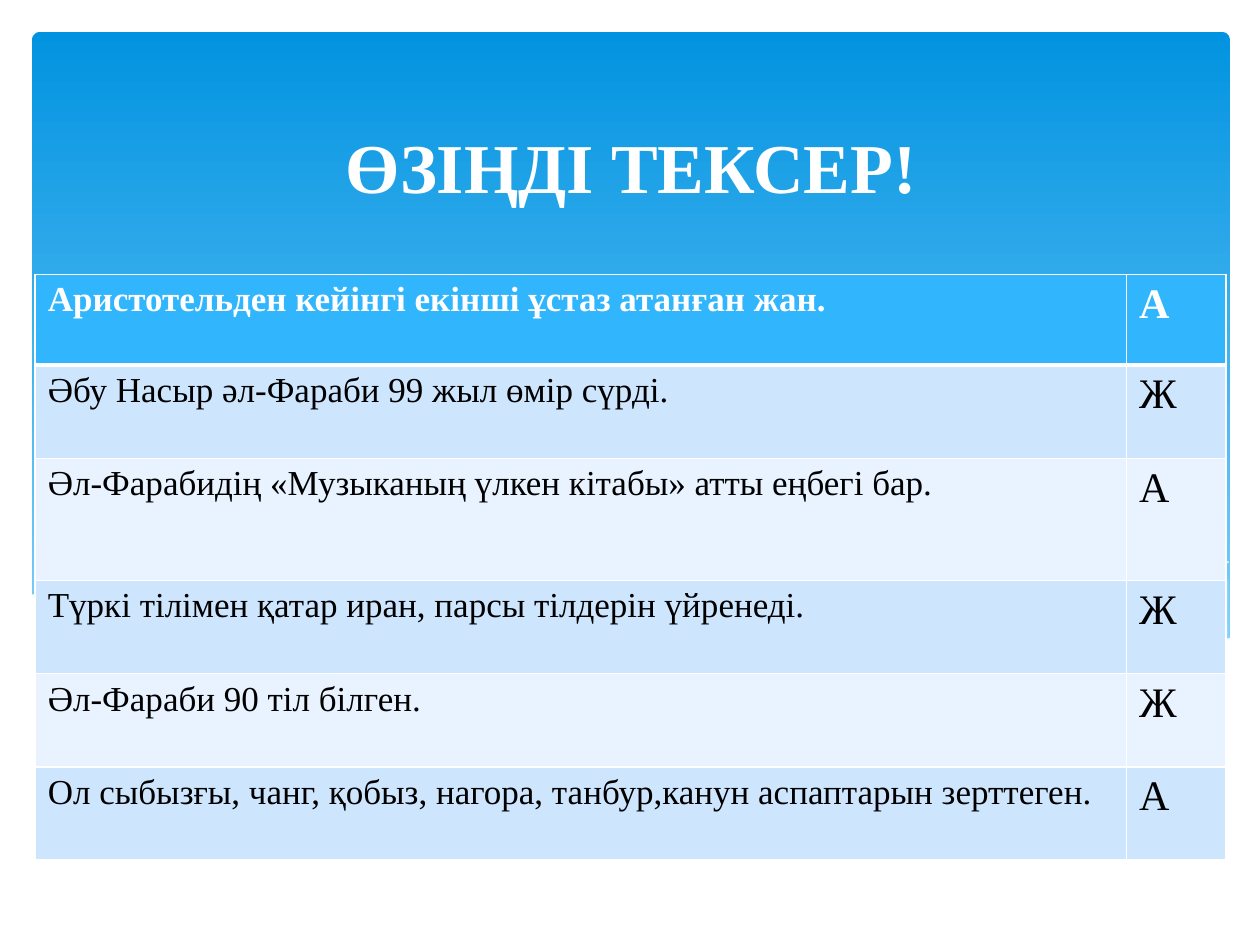
"""Build a self-check quiz slide with a wave background and an answer table."""
from lxml import etree
from pptx import Presentation
from pptx.dml.color import RGBColor
from pptx.enum.shapes import MSO_SHAPE
from pptx.enum.text import MSO_ANCHOR, PP_ALIGN
from pptx.oxml.ns import qn
from pptx.util import Cm, Pt

ROUND_RECT = MSO_SHAPE.ROUNDED_RECTANGLE
BOTTOM = MSO_ANCHOR.BOTTOM
CENTER = PP_ALIGN.CENTER
FONT = "Times New Roman"
WHITE = RGBColor(0xFF, 0xFF, 0xFF)
BLACK = RGBColor(0x00, 0x00, 0x00)
DEEP_BLUE = RGBColor(0x02, 0x93, 0xE0)
SKY_BLUE = RGBColor(0x83, 0xD3, 0xFE)
MIST = RGBColor(0xC6, 0xE7, 0xFC)
HEADER = RGBColor(0x31, 0xB6, 0xFD)
BANDS = (RGBColor(0xE8, 0xF3, 0xFF), RGBColor(0xCE, 0xE5, 0xFE))

TITLE = "ӨЗІҢДІ ТЕКСЕР!"
ROWS = [
    ("Аристотельден кейінгі екінші ұстаз атанған жан.", "А"),
    ("Әбу Насыр әл-Фараби 99 жыл өмір сүрді.", "Ж"),
    ("Әл-Фарабидің «Музыканың үлкен кітабы» атты еңбегі бар.", "А"),
    ("Түркі тілімен қатар иран, парсы тілдерін үйренеді.", "Ж"),
    ("Әл-Фараби 90 тіл білген.", "Ж"),
    ("Ол сыбызғы, чанг, қобыз, нагора, танбур,канун аспаптарын зерттеген.", "А"),
]
COL_WIDTHS = (22, 2)
ROW_HEIGHTS = (1.83, 1.88, 2.46, 1.88, 1.88, 1.88)
SIZES = (20, 24)

RIGHT_BAND = [(24.77, 11.68), (22.63, 12.09), (19.79, 12.78), (16.79, 13.34),
              (19.53, 13.64), (22.15, 13.54), (23.93, 13.18), (24.77, 12.88)]
LEFT_BAND = [(22.68, 13.54), (19.69, 13.06), (15.98, 12.24), (12.42, 11.53),
             (9.65, 11.33), (7.26, 11.48), (9.73, 11.86), (13.46, 12.73),
             (16.51, 13.34), (19.32, 13.64), (21.03, 13.69)]
LONG_CURVE = [(7.85, 11.58), (9.83, 11.38), (12.95, 11.48), (16.15, 11.89),
              (19.3, 12.52), (23.04, 13.51)]
SHORT_CURVE = [(15.57, 13.13), (19, 12.27), (22, 11.66), (24.77, 11.33)]
WHITE_WAVE = [(24.82, 12.85), (23.62, 13.26), (21.92, 13.54), (19.76, 13.61),
              (16.97, 13.34), (14.1, 12.83), (11.35, 12.19), (8.64, 11.63),
              (5.84, 11.3), (3.71, 11.33), (1.7, 11.66), (0.58, 12.01),
              (0.58, 14.96), (24.82, 14.96)]
WAVES = [(RIGHT_BAND, MIST, 29), (LEFT_BAND, MIST, 40), (LONG_CURVE, None, 0),
         (SHORT_CURVE, None, 0), (WHITE_WAVE, WHITE, 100)]


def add_wave(s, points, color, opacity):
    pts = [(Cm(x), Cm(y)) for x, y in points]
    builder = s.shapes.build_freeform(*pts[0], scale=1.0)
    builder.add_line_segments(pts[1:], close=color is not None)
    sp = builder.convert_to_shape()
    sp.shadow.inherit = False
    if color is None:
        sp.fill.background()
        sp.line.color.rgb = WHITE
        sp.line.width = Pt(0)
        return
    sp.line.fill.background()
    sp.fill.solid()
    sp.fill.fore_color.rgb = color
    if opacity < 100:
        clr = sp.fill._xPr.find(".//" + qn("a:srgbClr"))
        etree.SubElement(clr, qn("a:alpha"), val=str(opacity * 1000))


def add_background(s):
    sp = s.shapes.add_shape(ROUND_RECT, Cm(0.64), Cm(0.64), Cm(24.16), Cm(13.16))
    sp.adjustments[0] = 0.013
    sp.shadow.inherit = False
    sp.line.fill.background()
    sp.fill.gradient()
    sp.fill.gradient_angle = 270
    for stop, color in zip(sp.fill.gradient_stops, (DEEP_BLUE, SKY_BLUE)):
        stop.color.rgb = color
    for wave in WAVES:
        add_wave(s, *wave)


def format_run(r, size, color, bold):
    r.font.name = FONT
    r.font.size = Pt(size)
    r.font.color.rgb = color
    r.font.bold = bold


def add_title(s):
    sp = s.shapes.title
    sp.left, sp.top, sp.width, sp.height = Cm(3.81), Cm(0.91), Cm(17.83), Cm(3.4)
    tf = sp.text_frame
    tf.text = TITLE
    tf.vertical_anchor = BOTTOM
    p = tf.paragraphs[0]
    p.alignment = CENTER
    format_run(p.runs[0], 40, WHITE, True)
    s.shapes._spTree.append(sp._element)


def set_borders(cell, widths):
    tc_pr = cell._tc.get_or_add_tcPr()
    for side, width in widths.items():
        ln = etree.SubElement(tc_pr, qn("a:ln" + side), w=str(Pt(width)))
        fill = etree.SubElement(ln, qn("a:solidFill"))
        etree.SubElement(fill, qn("a:srgbClr"), val=str(WHITE))


def add_answers(s):
    table = s.shapes.add_table(len(ROWS), len(COL_WIDTHS), Cm(0.71), Cm(5.53),
                               Cm(sum(COL_WIDTHS)), Cm(sum(ROW_HEIGHTS))).table
    for col, width in zip(table.columns, COL_WIDTHS):
        col.width = Cm(width)
    for i, (row, height) in enumerate(zip(ROWS, ROW_HEIGHTS)):
        table.rows[i].height = Cm(height)
        head = i == 0
        top, bottom = (3 if i == 1 else 1), (3 if head else 1)
        for j, (text, size) in enumerate(zip(row, SIZES)):
            cell = table.cell(i, j)
            cell.text_frame.text = text
            format_run(cell.text_frame.paragraphs[0].runs[0], size,
                       WHITE if head else BLACK, head)
            set_borders(cell, {"L": 1, "R": 1, "T": top, "B": bottom})
            cell.fill.solid()
            cell.fill.fore_color.rgb = HEADER if head else BANDS[i % 2]


def main():
    prs = Presentation()
    prs.slide_width, prs.slide_height = Cm(25.4), Cm(19.05)
    s = prs.slides.add_slide(prs.slide_layouts[5])
    add_background(s)
    add_title(s)
    add_answers(s)
    prs.save("out.pptx")


if __name__ == "__main__":
    main()
